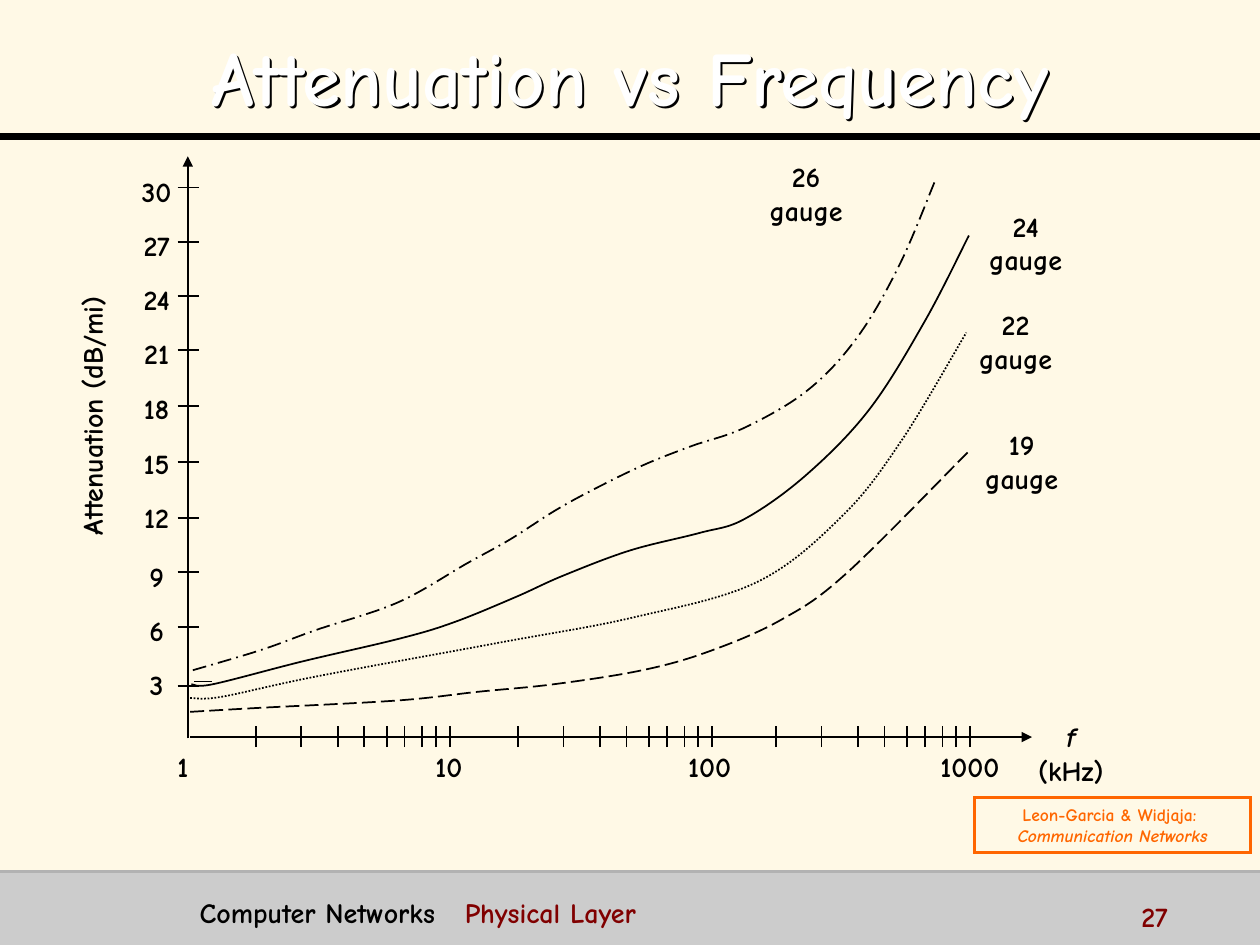
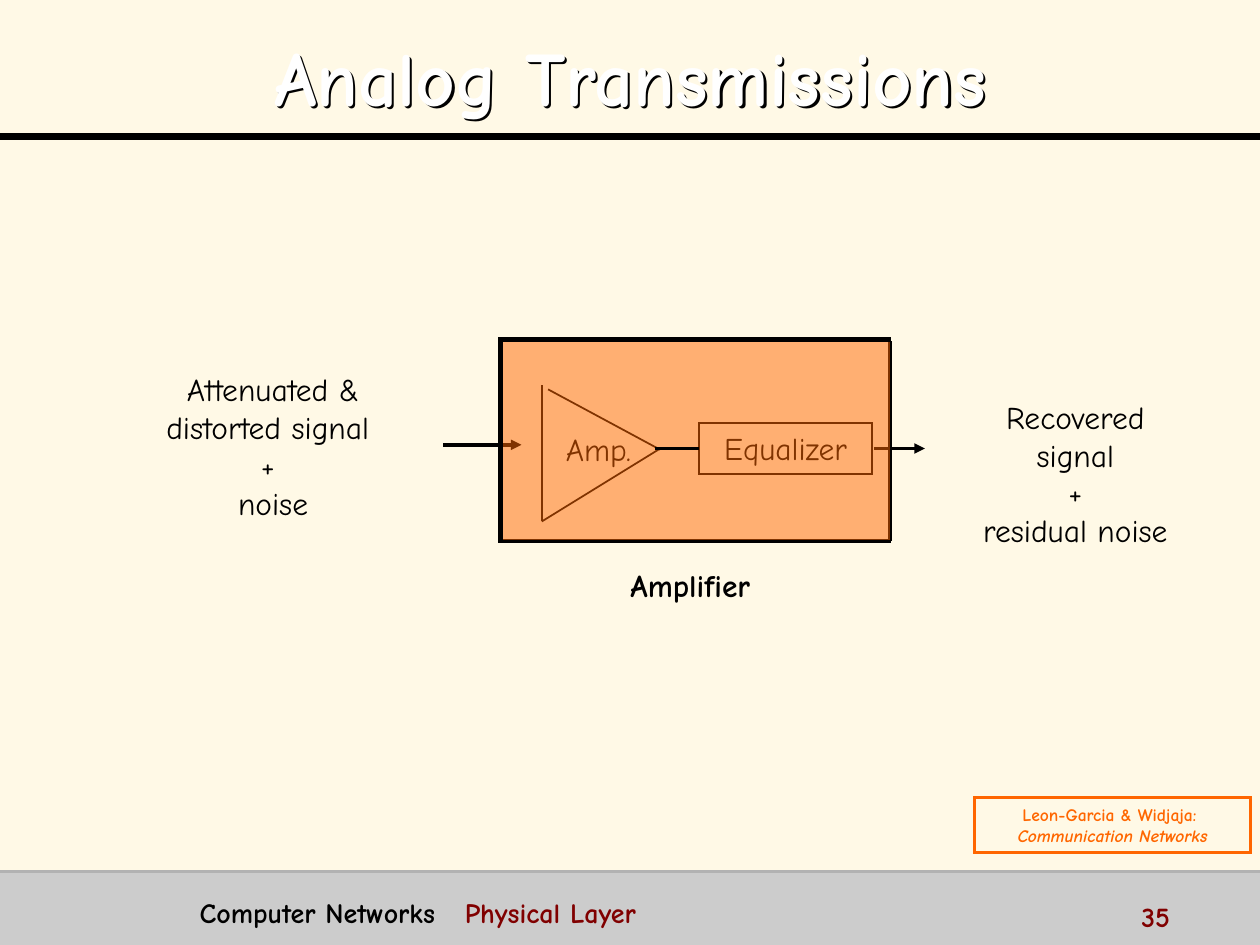
"""Builds two Physical Layer slides: an attenuation plot and an amplifier diagram."""
import pptx
import pptx.dml.color
import pptx.enum.dml
import pptx.enum.shapes
import pptx.enum.text
import pptx.oxml
import pptx.oxml.ns
import pptx.util

Pt = pptx.util.Pt
Shape = pptx.enum.shapes.MSO_SHAPE
Dash = pptx.enum.dml.MSO_LINE
Align = pptx.enum.text.PP_ALIGN
Mid = pptx.enum.text.MSO_ANCHOR.MIDDLE
NS = pptx.oxml.ns.nsdecls("a")
qn = pptx.oxml.ns.qn

FONT = "Comic Neue"
HUES = {"paper": "FFF9E6", "band": "CCCCCC", "edge": "B2B2B2", "ink": "000000",
        "title": "FFFFFF", "topic": "800000", "cite": "FF6600"}
COURSE, TOPIC = "Computer Networks", "Physical Layer"
CITE = ["Leon-Garcia & Widjaja: ", [("Communication Networks", {"italic": True})]]

CURVES = [
    (Dash.LONG_DASH, [
        (108.7, 406.8), (146.9, 404.6), (227.5, 400.3), (273.6, 395.3), (316.8, 391),
        (367.2, 383), (405.4, 372.2), (446.4, 354.2), (483.8, 327.6), (553, 258.5)]),
    (Dash.LONG_DASH_DOT, [
        (110.2, 383), (149, 371.5), (180.7, 360), (227.5, 344.2), (267.1, 321.8),
        (291.6, 308.2), (317.5, 291.6), (339.8, 279.4), (367.9, 265.7), (395.3, 254.9),
        (426.2, 244.1), (462.2, 222.5), (490.3, 192.2), (514.1, 151.2), (534.2, 103.7)]),
    (Dash.ROUND_DOT, [
        (108.7, 398.9), (126.7, 398.2), (180.7, 386.6), (285.8, 367.2), (362.2, 352.8),
        (432.7, 332.6), (481.7, 294.5), (515.5, 251.3), (552.2, 190.1)]),
    (None, [
        (109.4, 391), (121.7, 391), (172.8, 378), (228.2, 365), (259.2, 355.7),
        (294.5, 341.3), (321.8, 329), (360, 314.6), (399.6, 304.6), (425.5, 296.6),
        (460.8, 271.4), (496.8, 234), (528.5, 183.6), (553.7, 134.6)]),
]
GAUGES = [("19 gauge", 555.7, 241), ("22 gauge", 552.2, 172.2),
          ("24 gauge", 558, 116), ("26 gauge", 432.5, 87.7)]
LEVELS = [(30, 107.2, 95.8), (27, 138.2, 126.7), (24, 169.2, 157.6), (21, 200.2, 188.6),
          (18, 232.2, 220.3), (15, 264.2, 251.3), (12, 296, 282.2), (9, 327, 316),
          (6, 358.2, 347), (3, 392, 378)]
SPUR = (121, 389.5, 111, 389.5)
DECADES = [107.3, 257.2, 404.6]
MINORS = [38.9, 64.8, 85.7, 100.8, 113.8, 123.8, 133.9, 141.8, 149.8]
SCALE = [("1", 83.5, 42), ("10", 235.5, 42), ("100", 384.5, 42), ("1000", 521.5, 65.5)]

INPUT = ["Attenuated &", "distorted signal ", "+ ", "noise"]
OUTPUT = ["Recovered signal", "+", "residual noise"]
CONE = [(309.6, 220.3, 309.6, 297.5), (313.2, 222.5, 377.3, 257), (377.3, 256.3, 309.6, 298)]


def tint(name):
    return pptx.dml.color.RGBColor.from_string(HUES[name])


def xml(tag):
    return pptx.oxml.parse_xml(tag.replace(" ", f" {NS} ", 1))


def put(slide, lines, box, size=16, hue="ink", bold=True, align=Align.CENTER, anchor=None,
        pads=(7.2, 3.6, 7.2, 3.6), turn=0, space=None, tab=None, shape=None):
    """Write paragraphs, each a string or a list of (text, format) runs."""
    shape = shape or slide.shapes.add_textbox(*map(Pt, box))
    shape.rotation = turn
    frame = shape.text_frame
    frame.word_wrap = True
    frame.vertical_anchor = anchor
    frame.margin_left, frame.margin_top, frame.margin_right, frame.margin_bottom = map(Pt, pads)
    for i, line in enumerate(lines):
        para = frame.add_paragraph() if i else frame.paragraphs[0]
        if tab:
            para._p.get_or_add_pPr().append(
                xml(f'<a:tabLst ><a:tab pos="{Pt(tab)}" algn="l"/></a:tabLst>'))
        para.alignment = align
        para.line_spacing = space
        for text, form in [(line, {})] if isinstance(line, str) else line:
            run = para.add_run()
            run.text = text
            font = run.font
            font.name, font.size, font.bold = FONT, Pt(size), bold
            font.italic = form.get("italic", False)
            font.color.rgb = tint(form.get("hue", hue))
    return shape


def rect(slide, box, fill=None, line=None, width=1):
    shape = slide.shapes.add_shape(Shape.RECTANGLE, *map(Pt, box))
    shape.shadow.inherit = False
    if fill:
        shape.fill.solid()
        shape.fill.fore_color.rgb = tint(fill)
    else:
        shape.fill.background()
    if line:
        shape.line.color.rgb = tint(line)
        shape.line.width = Pt(width)
        shape.line._get_or_add_ln().append(xml('<a:miter lim="800000"/>'))
    else:
        shape.line.fill.background()
    return shape


def rule(slide, ends, width=1, hue="ink", arrow=False):
    line = slide.shapes.add_connector(pptx.enum.shapes.MSO_CONNECTOR.STRAIGHT, *map(Pt, ends))
    line.line.width = Pt(width)
    line.line.color.rgb = tint(hue)
    if arrow:
        line.line._get_or_add_ln().append(xml('<a:tailEnd type="triangle"/>'))
    line._element.spPr.append(xml("<a:effectLst />"))
    return line


def curve(slide, dots, dash):
    """Draw a smooth Bezier curve through the dots."""
    dots = [(Pt(x), Pt(y)) for x, y in dots]
    pen = slide.shapes.build_freeform(*dots[0])
    pen.add_line_segments(dots[1:], close=False)
    shape = pen.convert_to_shape()
    base = shape.left, shape.top
    ring = [dots[0], *dots, dots[-1]]
    legs = list(shape._element.iter(qn("a:lnTo")))
    for leg, a, b, c, d in zip(legs, ring, ring[1:], ring[2:], ring[3:]):
        one = [q + (r - p) / 6 for p, q, r in zip(a, b, c)]
        two = [q - (r - p) / 6 for p, q, r in zip(b, c, d)]
        marks = "".join('<a:pt x="{}" y="{}"/>'.format(*(round(v - o) for v, o in zip(dot, base)))
                        for dot in (one, two, c))
        leg.getparent().replace(leg, xml(f"<a:cubicBezTo >{marks}</a:cubicBezTo>"))
    shape.shadow.inherit = False
    shape.fill.background()
    shape.line.color.rgb = tint("ink")
    shape.line.width = Pt(1)
    shape.line.dash_style = dash


def start(deck, title, number):
    """Add a slide with the shared title, bands and footer."""
    slide = deck.slides.add_slide(deck.slide_layouts[6])
    slide.background.fill.solid()
    slide.background.fill.fore_color.rgb = tint("paper")
    rect(slide, (0, 498, 720, 42), fill="band")
    rule(slide, (0, 78, 720, 78), 4)
    rule(slide, (0, 498, 720, 498), 2, "edge")
    head = put(slide, [title], (14.4, 9.4, 692, 62.6), 44, "title", anchor=Mid, space=1.1)
    head._element.spPr.append(xml(
        f'<a:effectLst ><a:outerShdw dist="{Pt(1.8)}" dir="2700000" algn="ctr" rotWithShape="0">'
        f'<a:srgbClr val="{HUES["ink"]}"/></a:outerShdw></a:effectLst>'))
    put(slide, [[(COURSE + "\t", {}), (TOPIC, {"hue": "topic"})]], (101.5, 508, 524, 22.5),
        align=Align.LEFT, pads=(12.6, 3.6, 7.2, 3.6), tab=151.5)
    put(slide, [str(number)], (645.2, 510.7, 72, 18), hue="topic", align=Align.LEFT)
    return slide


def cite(slide):
    box = rect(slide, (557, 455.8, 157.5, 31.5), line="cite", width=2)
    put(slide, CITE, None, 10, "cite", anchor=Mid, shape=box)


def plot(deck):
    slide = start(deck, "Attenuation vs Frequency", 27)
    rule(slide, (108.7, 421.2, 589.7, 421.2), arrow=True)
    rule(slide, (107.3, 422, 107.3, 89.3), arrow=True)
    for dash, dots in CURVES:
        curve(slide, dots, dash)
    for level, tick, top in LEVELS:
        rule(slide, (101.5, tick, 113.5, tick))
        put(slide, [str(level)], (68.5, top, 42, 26.5), anchor=Mid)
    rule(slide, SPUR)
    for decade in DECADES:
        for minor in MINORS:
            rule(slide, (decade + minor, 427, decade + minor, 415))
    for text, x, wide in SCALE:
        put(slide, [text], (x, 424.5, wide, 26.5), anchor=Mid)
    put(slide, ["Attenuation (dB/mi)"], (-32, 224.5, 168.5, 26), turn=270)
    pads = (3.6, 3.6, 22.3, 3.6)
    put(slide, [[("f", {"italic": True}), (" (kHz)", {})]], (587.5, 407.7, 67.7, 26.5), pads=pads)
    for text, x, y in GAUGES:
        put(slide, [text], (x, y, 75, 26.5), pads=pads)
    cite(slide)


def chain(deck):
    slide = start(deck, "Analog Transmissions", 35)
    rule(slide, (499.7, 256.3, 528.5, 256.3), 2, arrow=True)
    stage = rect(slide, (399.6, 241.9, 98.6, 28.8), line="ink")
    put(slide, ["Equalizer"], None, 18, bold=False, shape=stage)
    rule(slide, (253.4, 254.2, 298, 254.2), 2, arrow=True)
    for ends in CONE:
        rule(slide, ends)
    put(slide, OUTPUT, (545, 223.8, 139, 72), 18, bold=False, pads=(14, 3.6, 14, 3.6))
    rect(slide, (285.8, 193.9, 222.5, 115.2), line="ink", width=2)
    put(slide, ["Amplifier"], (339, 319.7, 111, 28.8), 18)
    put(slide, ["Amp."], (309.6, 242.2, 64.8, 28.8), 18, bold=False)
    glass = rect(slide, (287.3, 195.1, 221.8, 113.8), "cite", "ink", 0.75)
    glass.fill._xPr.find(".//" + qn("a:srgbClr")).append(xml('<a:alpha val="50000"/>'))
    put(slide, INPUT, (25, 208, 262, 94.3), 18, bold=False)
    link = rule(slide, (374.4, 256.3, 399.6, 256.3), 2)
    link.end_connect(stage, 1)
    cite(slide)


def main():
    deck = pptx.Presentation()
    deck.slide_width, deck.slide_height = Pt(720), Pt(540)
    plot(deck)
    chain(deck)
    deck.save("out.pptx")


if __name__ == "__main__":
    main()
